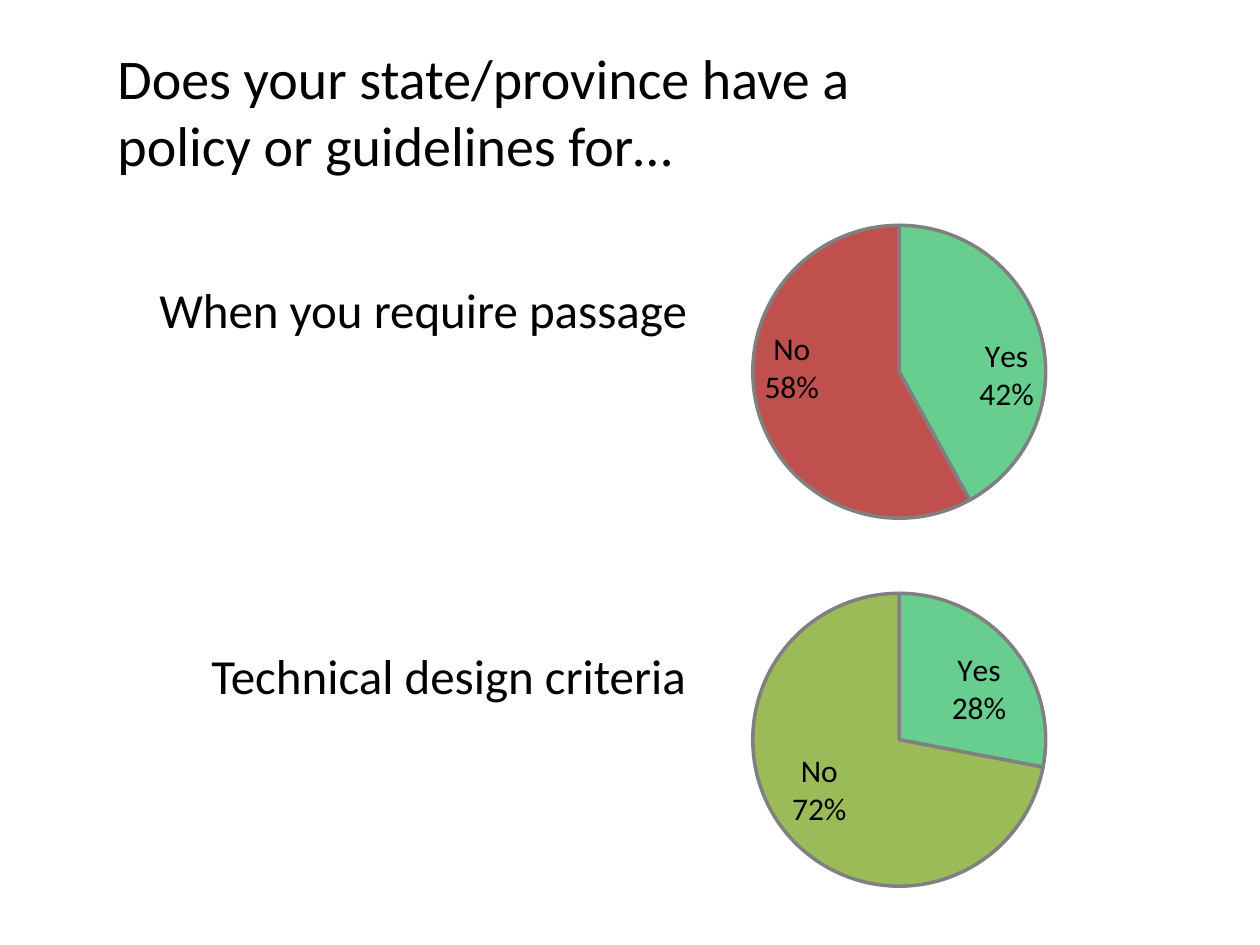
"""Build a survey slide with two yes/no pie charts and their questions."""
from lxml import etree
from pptx import Presentation
from pptx.chart.data import CategoryChartData
from pptx.dml.color import RGBColor
from pptx.enum.chart import XL_CHART_TYPE, XL_LABEL_POSITION
from pptx.enum.text import MSO_ANCHOR
from pptx.oxml import parse_xml
from pptx.oxml.ns import nsdecls, qn
from pptx.util import Emu, Pt

PIE = XL_CHART_TYPE.PIE
INSIDE_END = XL_LABEL_POSITION.INSIDE_END
MIDDLE, TOP = MSO_ANCHOR.MIDDLE, MSO_ANCHOR.TOP

FONT = "Calibri"
COLORS = {"text": "000000", "outline": "808080", "blank": "4F81BD",
          "yes": "68CE8F", "no_passage": "C0504D", "no_criteria": "9BBB59"}

TITLE = "Does your state/province have a \vpolicy or guidelines for…"
TITLE_BOX = (105, 32, 1134, 157)
QUESTIONS = [
    {"text": "When you require passage", "box": (147, 273, 577, 72), "chart_top": 63,
     "answers": [("Yes", 42, "yes"), ("No", 58, "no_passage")]},
    {"text": "Technical design criteria", "box": (199, 639, 525, 72), "chart_top": 431,
     "answers": [(" ", 0, "blank"), ("Yes", 28, "yes"), ("No", 72, "no_criteria")]},
]
CHART_LEFT, CHART_WIDTH, CHART_HEIGHT = 577, 651, 624
PLOT = {"x": 0.27, "y": 0.09, "w": 0.45, "h": 0.81}


def px(length):
    return Emu(round(length * 914400 / 126))


def color(key):
    return RGBColor.from_string(COLORS[key])


def style_font(font, size):
    font.name, font.size = FONT, Pt(size)
    font.color.rgb = color("text")


def add_text(slide, text, box, size, anchor):
    frame = slide.shapes.add_textbox(*map(px, box)).text_frame
    frame.word_wrap = True
    frame.vertical_anchor = anchor
    frame.text = text
    style_font(frame.paragraphs[0].font, size)


def place_plot(chart):
    plot_area = chart._chartSpace.chart.plotArea
    for old_layout in plot_area.findall(qn("c:layout")):
        plot_area.remove(old_layout)
    sides = "".join(f'<c:{side} val="{share}"/>' for side, share in PLOT.items())
    plot_area.insert(0, parse_xml(
        f'<c:layout {nsdecls("c")}><c:manualLayout><c:layoutTarget val="inner"/>'
        f'<c:xMode val="edge"/><c:yMode val="edge"/>{sides}</c:manualLayout></c:layout>'))


def hide_label(labels, index):
    label = etree.Element(qn("c:dLbl"))
    etree.SubElement(label, qn("c:idx")).set("val", str(index))
    etree.SubElement(label, qn("c:delete")).set("val", "1")
    labels._element.insert(0, label)


def add_pie(slide, answers, top):
    data = CategoryChartData()
    data.categories = [name for name, _, _ in answers]
    data.add_series("Series 1", [value for _, value, _ in answers])
    box = (CHART_LEFT, top, CHART_WIDTH, CHART_HEIGHT)
    chart = slide.shapes.add_chart(PIE, *map(px, box), data).chart
    chart.has_legend = chart.has_title = False
    style_font(chart.font, 18)
    place_plot(chart)
    chart.plots[0].vary_by_categories = True
    series = chart.plots[0].series[0]
    labels = series.data_labels
    labels.show_category_name = labels.show_percentage = True
    labels.show_value = False
    labels.number_format, labels.number_format_is_linked = "0%", False
    labels.position = INSIDE_END
    style_font(labels.font, 18)
    separator = etree.Element(qn("c:separator"))
    separator.text = "\n"
    labels._element.find(qn("c:showBubbleSize")).addnext(separator)
    for index, (_, value, key) in enumerate(answers):
        wedge = series.points[index].format
        wedge.fill.solid()
        wedge.fill.fore_color.rgb = color(key)
        wedge.line.color.rgb = color("outline")
        wedge.line.width = Pt(2)
        if value == 0:
            hide_label(labels, index)


def main():
    deck = Presentation()
    deck.slide_width, deck.slide_height = px(1260), px(945)
    slide = deck.slides.add_slide(deck.slide_layouts[6])
    add_text(slide, TITLE, TITLE_BOX, 32, MIDDLE)
    for question in QUESTIONS:
        add_pie(slide, question["answers"], question["chart_top"])
        add_text(slide, question["text"], question["box"], 28, TOP)
    deck.save("out.pptx")


if __name__ == "__main__":
    main()
